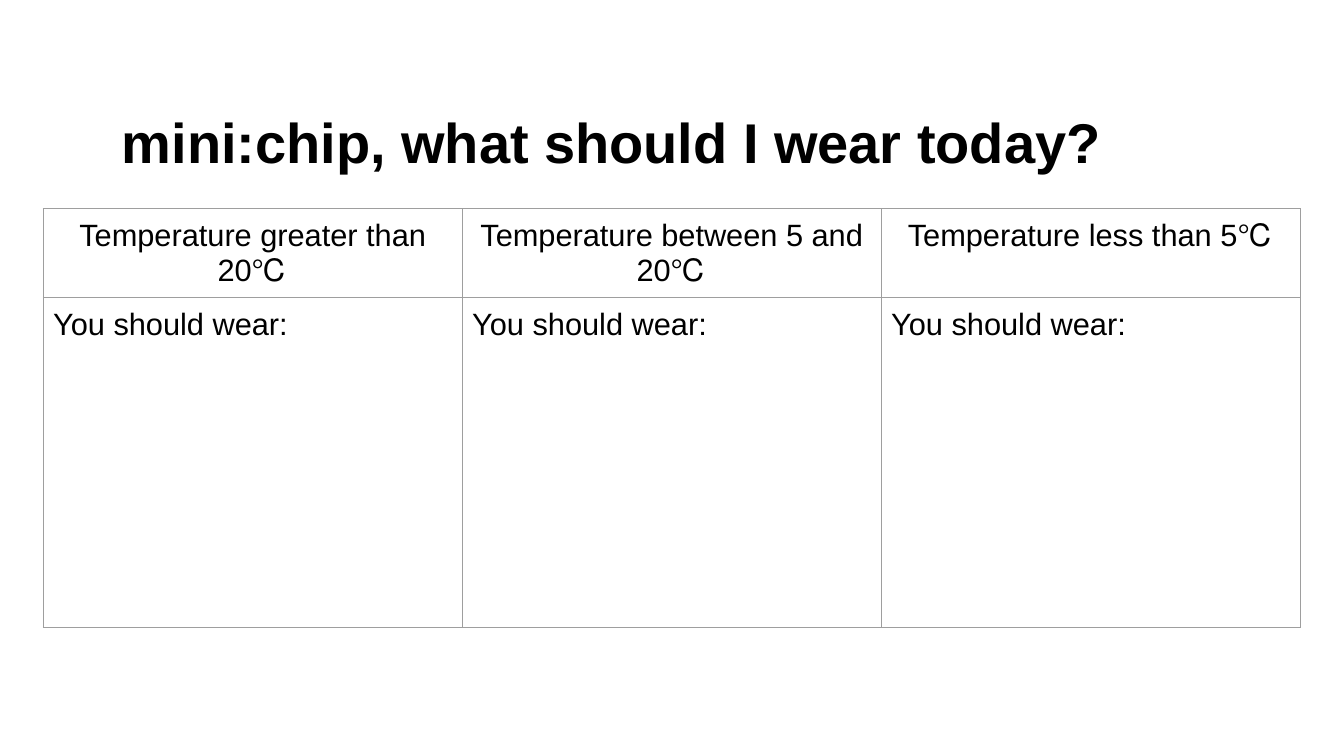
from dataclasses import dataclass

from lxml.etree import SubElement
from pptx import Presentation
from pptx.dml.color import RGBColor
from pptx.enum.text import MSO_ANCHOR, MSO_AUTO_SIZE, PP_ALIGN
from pptx.oxml.ns import qn
from pptx.util import Cm, Pt

TITLE = "mini:chip, what should I wear today?"
ROWS = [
    ["Temperature greater than 20℃", "Temperature between 5 and 20℃", "Temperature less than 5℃"],
    ["You should wear:"] * 3,
]
ROW_ALIGNMENTS = [PP_ALIGN.CENTER, PP_ALIGN.LEFT]
ROW_HEIGHTS = [Cm(2.24), Cm(8.31)]
COLUMN_WIDTH = Cm(10.56)
TABLE_LEFT, TABLE_TOP = Cm(1.09), Cm(5.26)
CELL_MARGIN = Cm(0.25)


@dataclass(frozen=True)
class Theme:
    font: str = "Arial"
    text: str = "000000"
    paper: str = "FFFFFF"
    border: str = "9E9E9E"
    title_size: int = 40
    table_size: int = 22
    border_width: float = 0.75


THEME = Theme()


def write_text(text_frame, text, *, size, bold=False, alignment=PP_ALIGN.LEFT, line_spacing=None):
    text_frame.word_wrap = True
    paragraph = text_frame.paragraphs[0]
    paragraph.alignment = alignment
    paragraph.line_spacing = line_spacing
    run = paragraph.add_run()
    run.text = text
    run.font.name = THEME.font
    run.font.size = Pt(size)
    run.font.bold = bold
    run.font.color.rgb = RGBColor.from_string(THEME.text)


def add_borders(cell):
    properties = cell._tc.get_or_add_tcPr()
    for side in ("a:lnL", "a:lnR", "a:lnT", "a:lnB"):
        line = SubElement(properties, qn(side), w=str(Pt(THEME.border_width)))
        fill = SubElement(line, qn("a:solidFill"))
        SubElement(fill, qn("a:srgbClr"), val=THEME.border)


def format_title(title):
    title.left, title.top, title.width, title.height = Cm(2.82), Cm(2.47), Cm(29.67), Cm(2.1)
    title.text_frame.auto_size = MSO_AUTO_SIZE.NONE
    title.text_frame.vertical_anchor = MSO_ANCHOR.TOP
    write_text(title.text_frame, TITLE, size=THEME.title_size, bold=True, line_spacing=1.07)


def add_clothing_table(slide):
    column_count = len(ROWS[0])
    table = slide.shapes.add_table(
        len(ROWS), column_count, TABLE_LEFT, TABLE_TOP,
        COLUMN_WIDTH * column_count, sum(ROW_HEIGHTS),
    ).table
    table.first_row = table.horz_banding = False
    for column in table.columns:
        column.width = COLUMN_WIDTH
    for row, height, texts, alignment in zip(table.rows, ROW_HEIGHTS, ROWS, ROW_ALIGNMENTS):
        row.height = height
        for cell, text in zip(row.cells, texts):
            cell.margin_left = cell.margin_right = CELL_MARGIN
            cell.margin_top = cell.margin_bottom = CELL_MARGIN
            add_borders(cell)
            cell.fill.solid()
            cell.fill.fore_color.rgb = RGBColor.from_string(THEME.paper)
            write_text(cell.text_frame, text, size=THEME.table_size, alignment=alignment)


def main():
    presentation = Presentation()
    presentation.slide_width, presentation.slide_height = Cm(33.87), Cm(19.05)
    slide = presentation.slides.add_slide(presentation.slide_layouts.get_by_name("Title Only"))
    format_title(slide.shapes.title)
    add_clothing_table(slide)
    presentation.save("out.pptx")


if __name__ == "__main__":
    main()
